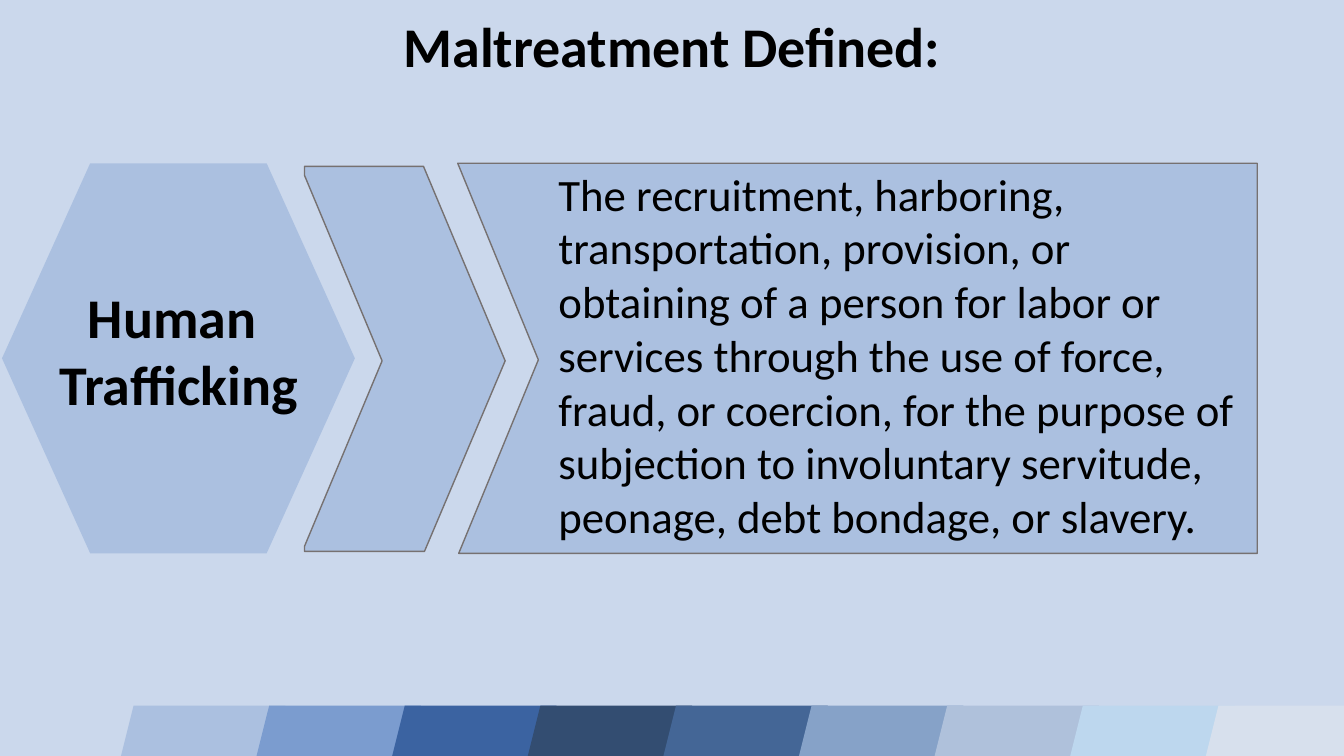
from dataclasses import dataclass

from pptx import Presentation
from pptx import util as u
from pptx.dml.color import RGBColor
from pptx.enum import shapes, text


@dataclass(frozen=True)
class Theme:
    font: str = "Calibri"
    ink: str = "000000"
    back: str = "CBD8EC"
    panel: str = "ABC0E0"
    outline: str = "767171"
    band: tuple = ("ABC0E0", "7B9CCF", "3B63A1", "334D71", "446696",
                   "86A2C8", "AFC1DB", "BDD7EE", "D7E0ED")
    heading: int = 40
    body: int = 32


theme = Theme()
rgb = RGBColor.from_string


def paint(sp, fill, line=None):
    sp.shadow.inherit = False
    sp.fill.solid()
    sp.fill.fore_color.rgb = rgb(fill)
    if line:
        sp.line.color.rgb = rgb(line)
        sp.line.width = u.Pt(1)
    else:
        sp.line.fill.background()


def write(sp, lines, size, bold, align, anchor=text.MSO_ANCHOR.TOP, spacing=1.0):
    """Fill a shape's text frame, one paragraph per line."""
    tf = sp.text_frame
    frame = dict(word_wrap=True, auto_size=text.MSO_AUTO_SIZE.NONE, vertical_anchor=anchor)
    for name, value in frame.items():
        setattr(tf, name, value)
    for i, line in enumerate(lines):
        p = tf.add_paragraph() if i else tf.paragraphs[0]
        p.alignment, p.line_spacing = align, spacing
        r = p.add_run()
        r.text = line
        for name, value in dict(name=theme.font, size=u.Pt(size), bold=bold).items():
            setattr(r.font, name, value)
        r.font.color.rgb = rgb(theme.ink)


prs = Presentation()
prs.slide_width, prs.slide_height = u.Inches(13.33), u.Inches(7.5)
s = prs.slides.add_slide(prs.slide_layouts[5])
s.background.fill.solid()
s.background.fill.fore_color.rgb = rgb(theme.back)

# Title
title = s.shapes.title
box = dict(left=3.15, top=0.14, width=7.03, height=0.7)
for name, value in box.items():
    setattr(title, name, u.Inches(value))
write(title, ["Maltreatment Defined:"], theme.heading, True,
      text.PP_ALIGN.CENTER, text.MSO_ANCHOR.BOTTOM, 0.9)

# Footer band
band_left, band_step = 1.09, 1.345
for col, color in enumerate(theme.band):
    tile = s.shapes.add_shape(
        shapes.MSO_SHAPE.PARALLELOGRAM, u.Inches(band_left + col * band_step),
        u.Inches(7), u.Inches(1.74), u.Inches(0.94))
    paint(tile, color)

# Term
hexagon = s.shapes.add_shape(shapes.MSO_SHAPE.HEXAGON, u.Inches(0.02), u.Inches(1.62),
                             u.Inches(3.5), u.Inches(3.87))
paint(hexagon, theme.panel)
term = s.shapes.add_textbox(u.Inches(0.28), u.Inches(2.75), u.Inches(2.98), u.Inches(1.45))
write(term, ["Human ", "Trafficking"], theme.heading, True, text.PP_ALIGN.CENTER)

# Arrow and definition panel, on a grid of hundredths of an inch
chevron = [(302, 165), (420, 165), (501, 358), (421, 547),
           (302, 547), (302, 542), (379, 358), (302, 174)]
panel = [(454, 162), (1247, 162), (1247, 549), (455, 549), (534, 357)]
for (x, y), *corners in (chevron, panel):
    outline = s.shapes.build_freeform(x, y, scale=u.Inches(0.01))
    outline.add_line_segments(corners, close=True)
    paint(outline.convert_to_shape(), theme.panel, theme.outline)

definition = s.shapes.add_textbox(u.Inches(5.44), u.Inches(1.6), u.Inches(6.96), u.Inches(3.87))
write(definition, [
    "The recruitment, harboring, transportation, provision, or obtaining of a person "
    "for labor or services through the use of force, fraud, or coercion, for the purpose "
    "of subjection to involuntary servitude, peonage, debt bondage, or slavery."],
    theme.body, False, text.PP_ALIGN.LEFT)

prs.save("out.pptx")
